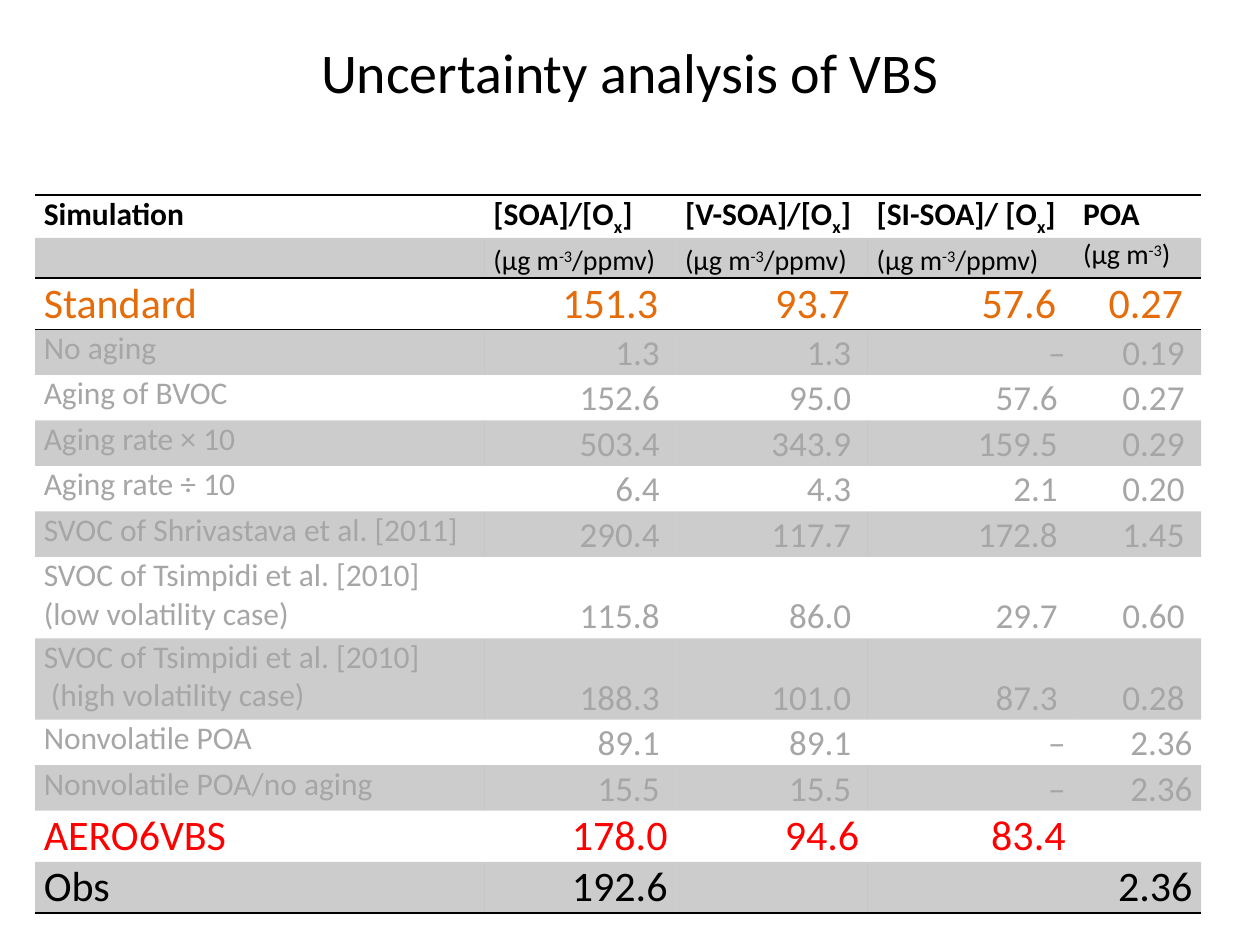
import pptx
import pptx.dml.color
import pptx.enum.text
import pptx.oxml
import pptx.oxml.ns
import pptx.util
from lxml import etree

Pt = pptx.util.Pt
RGBColor = pptx.dml.color.RGBColor
ALIGN = pptx.enum.text.PP_ALIGN
ANCHOR = pptx.enum.text.MSO_ANCHOR
qn = pptx.oxml.ns.qn

BLACK = RGBColor(0x00, 0x00, 0x00)
GRAY = RGBColor(0xA6, 0xA6, 0xA6)
ORANGE = RGBColor(0xE4, 0x6C, 0x0A)
RED = RGBColor(0xFF, 0x00, 0x00)

FONT = "Calibri"
PLAIN_TABLE_STYLE = "{2D5ABB26-0587-4C30-8999-92F81FD0307C}"
SUBSCRIPT, SUPERSCRIPT = "-25000", "30000"
COLUMN_WIDTHS = [257, 109.5, 109.5, 118, 72.5]
HEADER_HEIGHT, UNIT_HEIGHT, ROW_HEIGHT, TALL_HEIGHT = 24.5, 23, 26, 46.5

HEADINGS = ["Simulation", "[SOA]/[O|x|]", "[V-SOA]/[O|x|]", "[SI-SOA]/ [O|x|]", "POA"]
UNITS = [""] + ["(μg m|-3|/ppmv)"] * 3 + ["(μg m|-3|)"]
RESULTS = [
    ["Standard", "151.3 ", "93.7 ", "57.6 ", "0.27 "],
    ["No aging", "1.3 ", "1.3 ", "–", "0.19 "],
    ["Aging of BVOC", "152.6 ", "95.0 ", "57.6 ", "0.27 "],
    ["Aging rate × 10", "503.4 ", "343.9 ", "159.5 ", "0.29 "],
    ["Aging rate ÷ 10", "6.4 ", "4.3 ", "2.1 ", "0.20 "],
    ["SVOC of Shrivastava et al. [2011]", "290.4 ", "117.7 ", "172.8 ", "1.45 "],
    ["SVOC of Tsimpidi et al. [2010] \n(low volatility case)",
     "115.8 ", "86.0 ", "29.7 ", "0.60 "],
    ["SVOC of Tsimpidi et al. [2010]\n (high volatility case)",
     "188.3 ", "101.0 ", "87.3 ", "0.28 "],
    ["Nonvolatile POA", "89.1 ", "89.1 ", "–", "2.36"],
    ["Nonvolatile POA/no aging", "15.5 ", "15.5 ", "–", "2.36"],
    ["AERO6VBS", "178.0", "94.6", "83.4", ""],
    ["Obs", "192.6", "", "", "2.36"],
]
HIGHLIGHTS = {"Standard": ORANGE, "AERO6VBS": RED, "Obs": BLACK}


def format_run(run, size, color, bold=False):
    run.font.name = FONT
    run.font.size = Pt(size)
    run.font.bold = bold
    run.font.color.rgb = color


def add_title(slide, text):
    title = slide.shapes.title
    title.left, title.top, title.width, title.height = Pt(36), Pt(21), Pt(648), Pt(39)
    title.text_frame.text = text
    title.text_frame.vertical_anchor = ANCHOR.MIDDLE
    paragraph = title.text_frame.paragraphs[0]
    paragraph.alignment = ALIGN.CENTER
    format_run(paragraph.runs[0], 32, BLACK)


def add_border(cell, side):
    line = etree.SubElement(cell._tc.get_or_add_tcPr(), qn("a:" + side), w=str(Pt(1)))
    fill = etree.SubElement(line, qn("a:solidFill"))
    etree.SubElement(fill, qn("a:srgbClr"), val=str(BLACK))


def fill_cell(cell, shaded):
    if not shaded:
        cell.fill.background()
        return
    cell.fill.solid()
    cell.fill.fore_color.rgb = BLACK
    color = cell._tc.tcPr.find(".//" + qn("a:solidFill") + "[last()]/" + qn("a:srgbClr"))
    color = cell._tc.tcPr.find(qn("a:solidFill")).find(qn("a:srgbClr")) if color is not None else color
    etree.SubElement(color, qn("a:alpha"), val="20000")


def prepare_cell(cell, row, last_row):
    cell.margin_left = cell.margin_right = Pt(5)
    cell.margin_top = cell.margin_bottom = 0
    if row in (0, 2):
        add_border(cell, "lnT")
    if row in (1, 2, last_row):
        add_border(cell, "lnB")
    fill_cell(cell, shaded=row % 2 == 1)


def write_heading(cell, text, size, bold, script):
    paragraph = cell.text_frame.paragraphs[0]
    paragraph.alignment = ALIGN.JUSTIFY
    for index, part in enumerate(text.split("|")):
        run = paragraph.add_run()
        run.text = part
        format_run(run, size, BLACK, bold)
        if index % 2:
            run._r.get_or_add_rPr().set("baseline", script)


def write_result(cell, text, size, color, alignment):
    cell.text_frame.text = text
    for paragraph in cell.text_frame.paragraphs:
        paragraph.alignment = alignment
        for run in paragraph.runs:
            format_run(run, size, color)


def write_headings(table):
    rows = [(HEADINGS, 18, True, SUBSCRIPT), (UNITS, 16, False, SUPERSCRIPT)]
    for row, (texts, size, bold, script) in enumerate(rows):
        for column, text in enumerate(texts):
            cell = table.cell(row, column)
            if text:
                write_heading(cell, text, size, bold, script)
            if 0 < column < len(texts) - 1:
                cell.vertical_anchor = ANCHOR.BOTTOM


def write_results(table):
    for row, (name, *values) in enumerate(RESULTS, start=2):
        color = HIGHLIGHTS.get(name, GRAY)
        name_size, value_size = (24, 24) if name in HIGHLIGHTS else (18, 20)
        write_result(table.cell(row, 0), name, name_size, color, ALIGN.JUSTIFY)
        for column, value in enumerate(values, start=1):
            cell = table.cell(row, column)
            cell.vertical_anchor = ANCHOR.BOTTOM
            write_result(cell, value, value_size, color, ALIGN.RIGHT)


def add_results_table(slide):
    heights = [HEADER_HEIGHT, UNIT_HEIGHT]
    heights += [TALL_HEIGHT if "\n" in result[0] else ROW_HEIGHT for result in RESULTS]
    frame = slide.shapes.add_table(
        len(heights), len(COLUMN_WIDTHS), Pt(20), Pt(111.5),
        Pt(sum(COLUMN_WIDTHS)), Pt(sum(heights)))
    table = frame.table
    table.first_row = table.horz_banding = False
    table._tbl.tblPr.find(qn("a:tableStyleId")).text = PLAIN_TABLE_STYLE
    for column, width in zip(table.columns, COLUMN_WIDTHS):
        column.width = Pt(width)
    for index, (row, height) in enumerate(zip(table.rows, heights)):
        row.height = Pt(height)
        for cell in row.cells:
            prepare_cell(cell, index, len(heights) - 1)
    write_headings(table)
    write_results(table)


def main():
    presentation = pptx.Presentation()
    presentation.slide_width, presentation.slide_height = Pt(720), Pt(540)
    slide = presentation.slides.add_slide(presentation.slide_layouts[5])
    add_title(slide, "Uncertainty analysis of VBS")
    add_results_table(slide)
    presentation.save("out.pptx")


if __name__ == "__main__":
    main()
